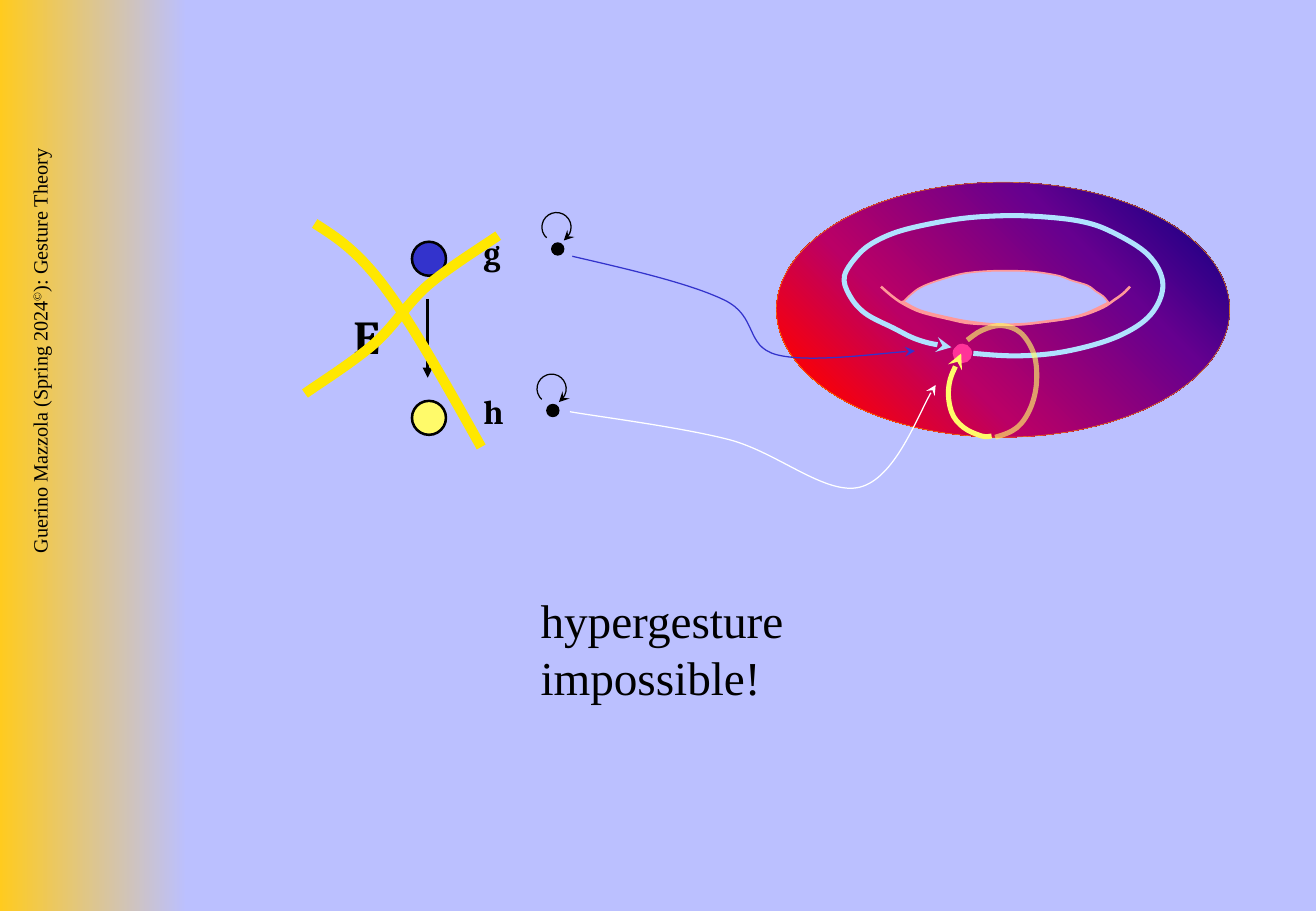
from lxml import etree
from pptx import Presentation
from pptx import util as u
from pptx.dml.color import RGBColor
from pptx.enum import shapes, text
from pptx.oxml.ns import qn

PX = 9144  # 100 px to the inch
WIDTH, HEIGHT = 1083, 750
BACKGROUND, BLACK = "BBC0FF", "000000"
SERIF, BOLD_SERIF = "Times New Roman", "Cambria"

# Content
BAND_STOPS = [(0, "FFCB1F"), (100, BACKGROUND)]
TORUS_STOPS = [(0, "FF8200"), (10, "FF0000"), (35, "BA0066"), (70, "66008F"), (100, "000082")]
CREDIT = [("Guerino Mazzola (Spring 2024", 0), ("©", 30), ("): Gesture Theory", 0)]
NODES = [((339, 330), "FFFA6A"), ((339, 199), "3333CC")]
LOOPS = [(446, 175), (442, 308)]
LABELS = [("E", (281, 248, 45, 57), 28), ("g", (388, 186, 36, 43), 20), ("h", (388, 317, 36, 43), 20)]
MESSAGE = "hypergesture impossible!"

# Curves: anchors, relaxed start and end, then line and fill format
HOLE = [
    ([(725, 236), (733, 243), (743, 250), (758, 257), (782, 263), (797, 266), (816, 267), (839, 267),
      (858, 265), (879, 262), (893, 259), (908, 253), (917, 247), (924, 242), (930, 236)],
     (False, False), dict(color="FF9999", width=1.5)),
    ([(742, 250), (749, 243), (757, 237), (769, 232), (789, 226), (802, 224), (818, 223), (837, 223),
      (853, 224), (871, 227), (882, 231), (895, 235), (902, 240), (908, 244), (913, 250)],
     (False, False), dict(color="FF9999", width=1, fill=BACKGROUND)),
    ([(743, 249), (743, 249), (744, 249), (758, 256), (782, 262), (798, 265), (817, 267), (840, 267),
      (859, 265), (880, 262), (894, 258), (909, 251), (912, 249), (912, 249), (912, 249)],
     (False, False), dict(color="FF9999", width=1.5, fill=BACKGROUND)),
]
GESTURES = [
    ([(801, 291), (840, 293), (879, 289), (920, 277), (947, 259), (957, 234), (945, 210), (915, 191),
      (888, 182), (849, 178), (816, 178), (784, 181), (745, 189), (722, 198), (707, 209), (695, 227),
      (699, 243), (712, 258), (735, 270), (756, 280), (783, 286)],
     (True, True), dict(color="B0E2FF", width=3, tail="stealth")),
    ([(471, 211), (596, 247), (639, 292), (753, 289)],
     (True, False), dict(color="3333CC", width=0.75, tail="stealth")),
    ([(791, 291), (781, 317), (783, 339), (793, 352), (808, 359), (816, 359)],
     (False, False), dict(color="FFFA6A", width=3, head="stealth")),
    ([(819, 360), (837, 352), (848, 336), (853, 315), (851, 292), (840, 274), (824, 268), (808, 272),
      (796, 280)],
     (True, False), dict(color="FFFA6A", width=3, alpha=64)),
    ([(469, 339), (600, 362), (708, 401), (770, 317)],
     (False, False), dict(color="FFFFFF", width=0.75, tail="stealth")),
]
CROSS = [
    ([(410, 194), (352, 235), (308, 283), (251, 324)],
     (False, False), dict(color="FFE700", width=6)),
    ([(259, 184), (317, 237), (396, 368)],
     (True, True), dict(color="FFE700", width=6)),
]


def rgb(color):
    return RGBColor.from_string(color)


def px(*lengths):
    return [u.Emu(round(length * PX)) for length in lengths]


def format_line(shape, color, width, head=None, tail=None, alpha=None):
    if color is None:
        shape.line.fill.background()
        return
    shape.line.color.rgb = rgb(color)
    shape.line.width = u.Pt(width)
    line = shape.line._get_or_add_ln()
    if alpha:
        value = line.find(".//" + qn("a:srgbClr"))
        etree.SubElement(value, qn("a:alpha")).set("val", str(alpha * 1000))
    for tag, arrow in (("a:headEnd", head), ("a:tailEnd", tail)):
        if arrow:
            etree.SubElement(line, qn(tag)).set("type", arrow)


def format_shape(shape, fill=None, color=None, width=0.75, **line):
    shape.shadow.inherit = False
    if isinstance(fill, list):
        shape.fill.gradient()
        stops = shape._element.spPr.find(".//" + qn("a:gsLst"))
        for stop in list(stops):
            stops.remove(stop)
        for position, stop_color in fill:
            stop = etree.SubElement(stops, qn("a:gs"), pos=str(position * 1000))
            etree.SubElement(stop, qn("a:srgbClr"), val=stop_color)
    elif fill:
        shape.fill.solid()
        shape.fill.fore_color.rgb = rgb(fill)
    else:
        shape.fill.background()
    format_line(shape, color, width, **line)


def add_preset(kind, box, rotation=0, **style):
    shape = slide.shapes.add_shape(kind, *px(*box))
    shape.rotation = rotation
    format_shape(shape, **style)
    return shape


def add_line(start, end, **style):
    line = slide.shapes.add_connector(shapes.MSO_CONNECTOR.STRAIGHT, *px(*start, *end))
    format_line(line, BLACK, **style)
    etree.SubElement(line._element.spPr, qn("a:effectLst"))


def middle(a, b):
    return tuple((p + q) / 2 for p, q in zip(a, b))


def bezier_points(anchors, relaxed):
    """Two control points and an end for each stretch of a smooth curve."""
    padded = [anchors[0], *anchors, anchors[-1]]
    stretches = []
    for a, b, c, d in zip(padded, padded[1:], padded[2:], padded[3:]):
        leave = tuple(q + (r - p) / 6 for p, q, r in zip(a, b, c))
        arrive = tuple(r - (s - q) / 6 for q, r, s in zip(b, c, d))
        stretches.append([leave, arrive, c])
    if relaxed[0]:
        stretches[0][0] = middle(anchors[0], stretches[0][1])
    if relaxed[1]:
        stretches[-1][1] = middle(stretches[-1][0], anchors[-1])
    return [point for stretch in stretches for point in stretch]


def add_curve(anchors, relaxed, style):
    points = [px(*point) for point in bezier_points(anchors, relaxed)]
    builder = slide.shapes.build_freeform(*px(*anchors[0]), scale=1.0)
    builder.add_line_segments(points, close=False)
    shape = builder.convert_to_shape()
    # Join every three straight segments into one cubic curve
    outline = shape._element.spPr.find(".//" + qn("a:path"))
    segments = outline.findall(qn("a:lnTo"))
    for first in range(0, len(segments), 3):
        cubic = etree.SubElement(outline, qn("a:cubicBezTo"))
        for segment in segments[first:first + 3]:
            cubic.append(segment[0])
            outline.remove(segment)
    format_shape(shape, **style)


def add_text(runs, box, size, font=SERIF, bold=False, align=text.PP_ALIGN.LEFT, rotation=0):
    shape = slide.shapes.add_textbox(*px(*box))
    shape.rotation = rotation
    shape.text_frame.word_wrap = True
    paragraph = shape.text_frame.paragraphs[0]
    paragraph.alignment = align
    for words, baseline in runs:
        run = paragraph.add_run()
        run.text = words
        run.font.name, run.font.size, run.font.bold = font, u.Pt(size), bold
        run.font.color.rgb = rgb(BLACK)
        if baseline:
            run._r.get_or_add_rPr().set("baseline", str(baseline * 1000))


presentation = Presentation()
presentation.slide_width, presentation.slide_height = px(WIDTH, HEIGHT)
slide = presentation.slides.add_slide(presentation.slide_layouts[6])
slide.background.fill.solid()
slide.background.fill.fore_color.rgb = rgb(BACKGROUND)
OVAL, RECTANGLE = shapes.MSO_SHAPE.OVAL, shapes.MSO_SHAPE.RECTANGLE

# Side band with credit
band = add_preset(RECTANGLE, (0, 0, 154, HEIGHT), fill=BAND_STOPS)
band.fill.gradient_angle = 0
add_text(CREDIT, (-240, 370, 565, 50), 12, align=text.PP_ALIGN.RIGHT, rotation=270)

# Torus
torus = add_preset(OVAL, (639, 150, 373, 210), fill=TORUS_STOPS, color="FF9900", width=0.25)
torus.fill.gradient_angle = 45
for curve in HOLE:
    add_curve(*curve)

# Points with loop arrows
for x, y in LOOPS:
    add_preset(OVAL, (x, y, 24, 24), rotation=311.2, color=BLACK)
    add_preset(RECTANGLE, (x + 5, y + 15, 15, 15), rotation=311.2, fill=BACKGROUND)
    add_line((x + 23, y + 18), (x + 18, y + 23), width=0.75, tail="stealth")
    add_preset(OVAL, (x + 8, y + 25, 10, 10), fill=BLACK, color=BLACK)

# Graph E from g to h
for (x, y), fill in NODES:
    add_preset(OVAL, (x, y, 28, 28), fill=fill, color=BLACK, width=1.5)
add_line((352, 246), (352, 311), width=1.5, tail="triangle")
for label, box, size in LABELS:
    add_text([(label, 0)], box, size, font=BOLD_SERIF, bold=True)

# Gestures on the torus, message and cross
add_preset(OVAL, (784, 283, 16, 16), fill="FF3399")
for curve in GESTURES:
    add_curve(*curve)
add_text([(MESSAGE, 0)], (435, 482, 356, 50), 28)
for curve in CROSS:
    add_curve(*curve)

presentation.save("out.pptx")
